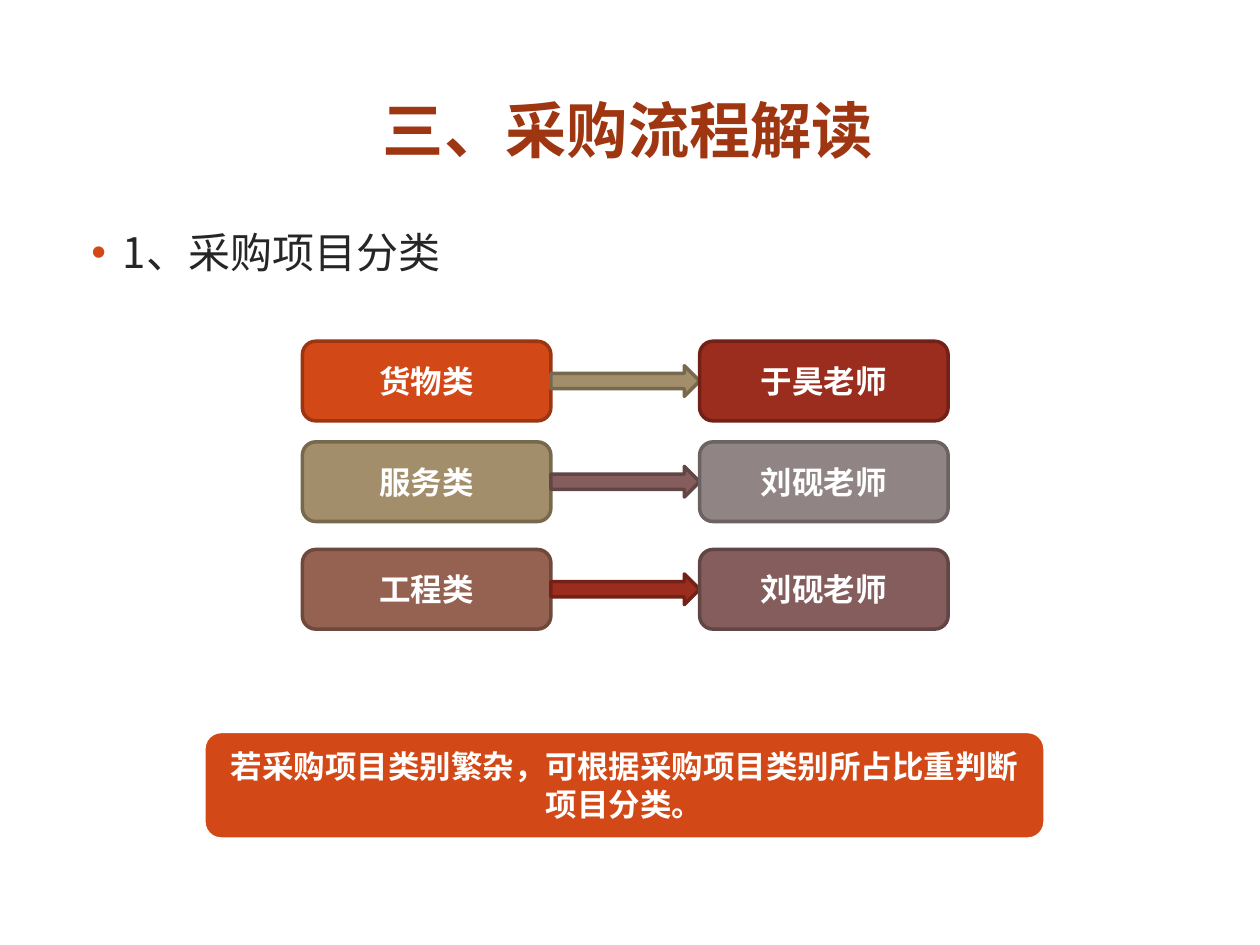
from lxml.etree import SubElement
from pptx import Presentation
from pptx.dml.color import RGBColor
from pptx.enum.shapes import MSO_SHAPE
from pptx.enum.text import MSO_ANCHOR, PP_ALIGN
from pptx.oxml.ns import qn
from pptx.util import Pt

CHINESE_FONT = "Noto Sans CJK SC"
BOX_FONT = "League Spartan"


def write(shape, text, size, color, bold=True, font=CHINESE_FONT, align=PP_ALIGN.CENTER):
    frame = shape.text_frame
    frame.text = text
    frame.word_wrap = True
    paragraph = frame.paragraphs[0]
    paragraph.alignment = align
    run = paragraph.runs[0]
    run.font.size = Pt(size)
    run.font.bold = bold
    run.font.color.rgb = RGBColor.from_string(color)
    run.font.name = font
    SubElement(run.font._element, qn("a:ea")).set("typeface", CHINESE_FONT)
    return paragraph


def add_block(shapes, kind, left, top, width, height, fill, line, line_width=2):
    shape = shapes.add_shape(kind, Pt(left), Pt(top), Pt(width), Pt(height))
    shape.shadow.inherit = False
    shape.fill.solid()
    shape.fill.fore_color.rgb = RGBColor.from_string(fill)
    shape.line.color.rgb = RGBColor.from_string(line)
    shape.line.width = Pt(line_width)
    shape.text_frame.vertical_anchor = MSO_ANCHOR.MIDDLE
    return shape


presentation = Presentation()
presentation.slide_width, presentation.slide_height = Pt(720), Pt(540)
slide = presentation.slides.add_slide(presentation.slide_layouts[1])

# Title
title = slide.shapes.title
title.left, title.top, title.width, title.height = Pt(34), Pt(32.5), Pt(650), Pt(82)
write(title, "三、采购流程解读", 35, "9E3611")
title.text_frame.vertical_anchor = MSO_ANCHOR.MIDDLE

# Bulleted heading
body = slide.placeholders[1]
body.left, body.top, body.width, body.height = Pt(36), Pt(126), Pt(648), Pt(404.5)
heading = write(body, "1、采购项目分类", 24, "262626", bold=False, align=PP_ALIGN.LEFT)
properties = heading._p.get_or_add_pPr()
properties.set("marL", str(Pt(27)))
properties.set("indent", str(Pt(-18)))
bullet_color = SubElement(properties, qn("a:buClr"))
SubElement(bullet_color, qn("a:srgbClr")).set("val", "D34817")
SubElement(properties, qn("a:buFont")).set("typeface", "Arial")
SubElement(properties, qn("a:buChar")).set("char", "•")

# Project categories and the teachers in charge: (text, fill, line)
rows = [
    (195, ("货物类", "D34817", "9C3511"), ("A28E6A", "78694E"), ("于昊老师", "9B2D1F", "732117")),
    (252.5, ("服务类", "A28E6A", "78694E"), ("855D5D", "624545"), ("刘砚老师", "918485", "6B6262")),
    (314, ("工程类", "956251", "6E493C"), ("9B2D1F", "732117"), ("刘砚老师", "855D5D", "624545")),
]
box_width, box_height = 142, 45.5
arrow_width, arrow_height = 85, 17.5
category_left = 172.8
arrow_left = category_left + box_width
teacher_left = arrow_left + arrow_width
diagram = slide.shapes.add_group_shape()
for top, category, arrow_colors, teacher in rows:
    arrow_top = top + (box_height - arrow_height) / 2
    category_box = add_block(diagram.shapes, MSO_SHAPE.ROUNDED_RECTANGLE, category_left, top,
                             box_width, box_height, *category[1:])
    add_block(diagram.shapes, MSO_SHAPE.RIGHT_ARROW, arrow_left, arrow_top,
              arrow_width, arrow_height, *arrow_colors)
    teacher_box = add_block(diagram.shapes, MSO_SHAPE.ROUNDED_RECTANGLE, teacher_left, top,
                            box_width, box_height, *teacher[1:])
    write(category_box, category[0], 18, "FFFFFF", font=BOX_FONT)
    write(teacher_box, teacher[0], 18, "FFFFFF", font=BOX_FONT)

# Closing note
note = add_block(slide.shapes, MSO_SHAPE.ROUNDED_RECTANGLE, 116, 417.5, 481.7, 62.5,
                 "D34817", "FFFFFF", 3)
write(note, "若采购项目类别繁杂，可根据采购项目类别所占比重判断项目分类。", 18, "FFFFFF")

presentation.save("out.pptx")
